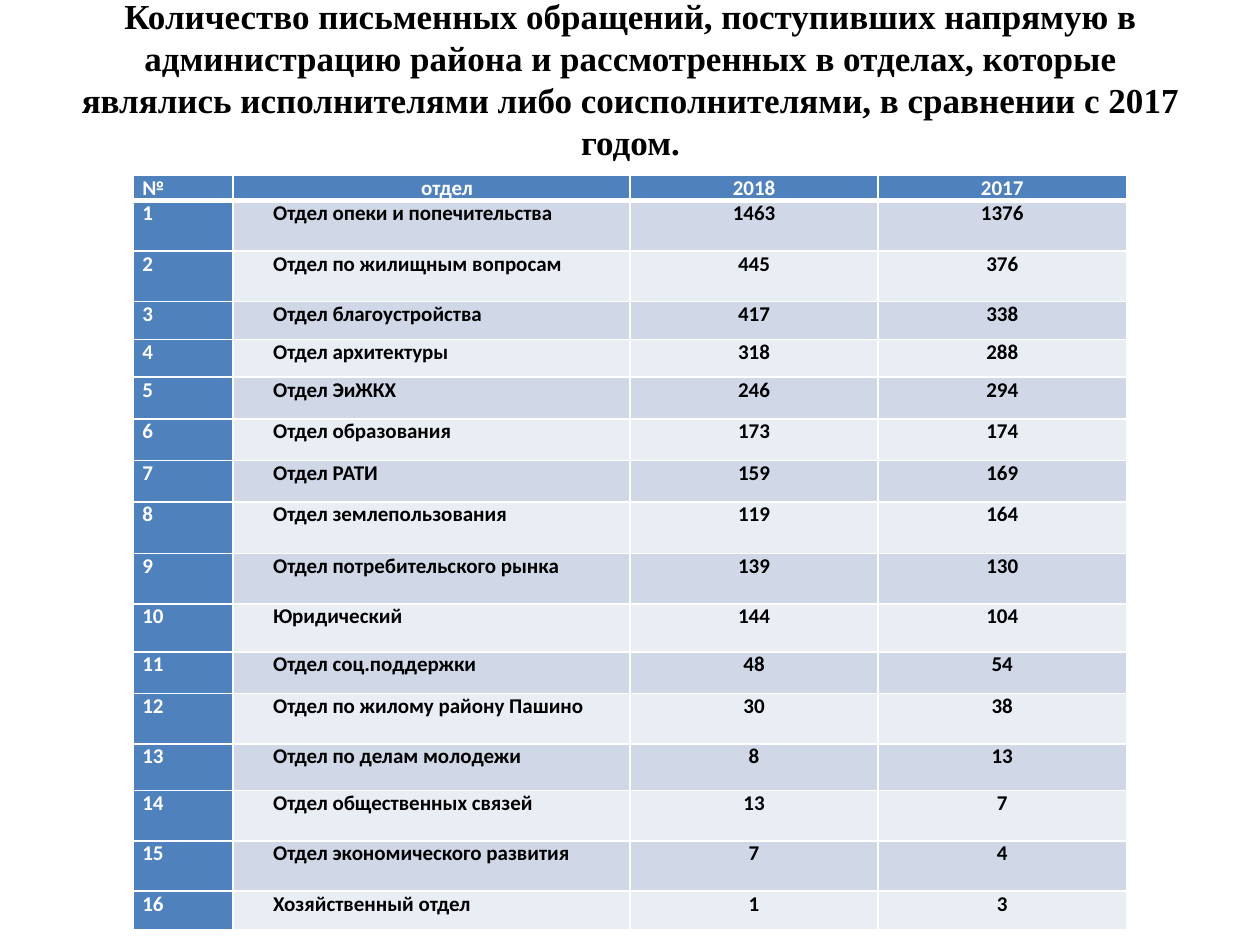
from dataclasses import dataclass

from lxml import etree
from pptx import Presentation
from pptx.dml.color import RGBColor
from pptx.enum.text import MSO_ANCHOR, PP_ALIGN
from pptx.oxml.ns import qn
from pptx.util import Inches, Pt

LEFT, CENTER, JUSTIFY = PP_ALIGN.LEFT, PP_ALIGN.CENTER, PP_ALIGN.JUSTIFY
MIDDLE = MSO_ANCHOR.MIDDLE

HEADING = (
    "Количество письменных обращений, поступивших напрямую в администрацию "
    "района и рассмотренных в отделах, которые являлись исполнителями либо "
    "соисполнителями, в сравнении с 2017 годом."
)
HEADER = ("№", "отдел", "2018", "2017")
DEPARTMENTS = [
    ("Отдел опеки и попечительства", 1463, 1376),
    ("Отдел по жилищным вопросам", 445, 376),
    ("Отдел благоустройства", 417, 338),
    ("Отдел архитектуры", 318, 288),
    ("Отдел ЭиЖКХ", 246, 294),
    ("Отдел образования", 173, 174),
    ("Отдел РАТИ", 159, 169),
    ("Отдел землепользования", 119, 164),
    ("Отдел потребительского рынка", 139, 130),
    ("Юридический", 144, 104),
    ("Отдел соц.поддержки", 48, 54),
    ("Отдел по жилому району Пашино", 30, 38),
    ("Отдел по делам молодежи", 8, 13),
    ("Отдел общественных связей", 13, 7),
    ("Отдел экономического развития", 7, 4),
    ("Хозяйственный отдел", 1, 3),
]

SLIDE_WIDTH, SLIDE_HEIGHT = 10, 7.5
HEADING_BOX = (0.51, 0, 8.99, 1.55)
TABLE_LEFT, TABLE_TOP, TABLE_WIDTH = 1.06, 1.39, 7.88
COLUMN_SHARES = (0.1, 0.4, 0.25, 0.25)
ROW_HEIGHTS = (0.2, 0.4, 0.4, 0.3, 0.3, 0.33, 0.33, 0.33, 0.41,
               0.4, 0.38, 0.33, 0.4, 0.37, 0.4, 0.4, 0.31)
CELL_INSET, DEPARTMENT_INDENT = 0.07, 0.25


@dataclass(frozen=True)
class Theme:
    heading_font: str = "Times New Roman"
    table_font: str = "Calibri"
    heading_size: int = 20
    heading_leading: int = 24
    table_size: int = 12
    ink: str = "000000"
    white: str = "FFFFFF"
    accent: str = "4F81BD"
    bands: tuple = ("D0D8E8", "E9EDF4")
    rule: int = 1
    header_rule: int = 3


THEME = Theme()


def add_run(paragraph, text, font_name, size, color):
    run = paragraph.add_run()
    run.text = text
    run.font.name = font_name
    run.font.size = Pt(size)
    run.font.bold = True
    run.font.color.rgb = RGBColor.from_string(color)


def add_borders(cell, row):
    widths = {
        "a:lnL": THEME.rule,
        "a:lnR": THEME.rule,
        "a:lnT": THEME.header_rule if row == 1 else THEME.rule,
        "a:lnB": THEME.header_rule if row == 0 else THEME.rule,
    }
    properties = cell._tc.get_or_add_tcPr()
    for side, width in widths.items():
        line = etree.SubElement(properties, qn(side), w=str(Pt(width)))
        paint = etree.SubElement(line, qn("a:solidFill"))
        etree.SubElement(paint, qn("a:srgbClr"), val=THEME.white)


def fill_cell(cell, text, row, column):
    accented = row == 0 or column == 0
    cell.margin_left = cell.margin_right = Inches(CELL_INSET)
    cell.margin_top = cell.margin_bottom = 0
    add_borders(cell, row)
    cell.fill.solid()
    cell.fill.fore_color.rgb = RGBColor.from_string(
        THEME.accent if accented else THEME.bands[(row - 1) % 2])

    paragraph = cell.text_frame.paragraphs[0]
    paragraph.alignment = CENTER
    if column == 0:
        paragraph.alignment = JUSTIFY
    elif column == 1:
        paragraph_properties = paragraph._p.get_or_add_pPr()
        paragraph_properties.set("marL", str(Inches(DEPARTMENT_INDENT)))
        paragraph_properties.set("indent", "0")
        if row > 0:
            paragraph.alignment = LEFT
    add_run(paragraph, text, THEME.table_font, THEME.table_size,
            THEME.white if accented else THEME.ink)


def add_heading(slide):
    heading = slide.shapes.title
    heading.left, heading.top, heading.width, heading.height = map(Inches, HEADING_BOX)
    frame = heading.text_frame
    frame.word_wrap = True
    frame.vertical_anchor = MIDDLE
    frame.margin_top, frame.margin_bottom = 0, Inches(0.3)
    paragraph = frame.paragraphs[0]
    paragraph.alignment = CENTER
    paragraph.line_spacing = Pt(THEME.heading_leading)
    add_run(paragraph, HEADING, THEME.heading_font, THEME.heading_size, THEME.ink)


def add_department_table(slide):
    rows = [HEADER] + [(number, *department)
                       for number, department in enumerate(DEPARTMENTS, 1)]
    table = slide.shapes.add_table(
        len(rows), len(HEADER), Inches(TABLE_LEFT), Inches(TABLE_TOP),
        Inches(TABLE_WIDTH), Inches(sum(ROW_HEIGHTS))).table
    table.first_col = True
    for column, share in zip(table.columns, COLUMN_SHARES):
        column.width = Inches(TABLE_WIDTH * share)
    for row, height in zip(table.rows, ROW_HEIGHTS):
        row.height = Inches(height)
    for row, values in enumerate(rows):
        for column, value in enumerate(values):
            fill_cell(table.cell(row, column), str(value), row, column)


def main():
    deck = Presentation()
    deck.slide_width, deck.slide_height = Inches(SLIDE_WIDTH), Inches(SLIDE_HEIGHT)
    slide = deck.slides.add_slide(deck.slide_layouts[5])
    add_heading(slide)
    add_department_table(slide)
    deck.save("out.pptx")


if __name__ == "__main__":
    main()
